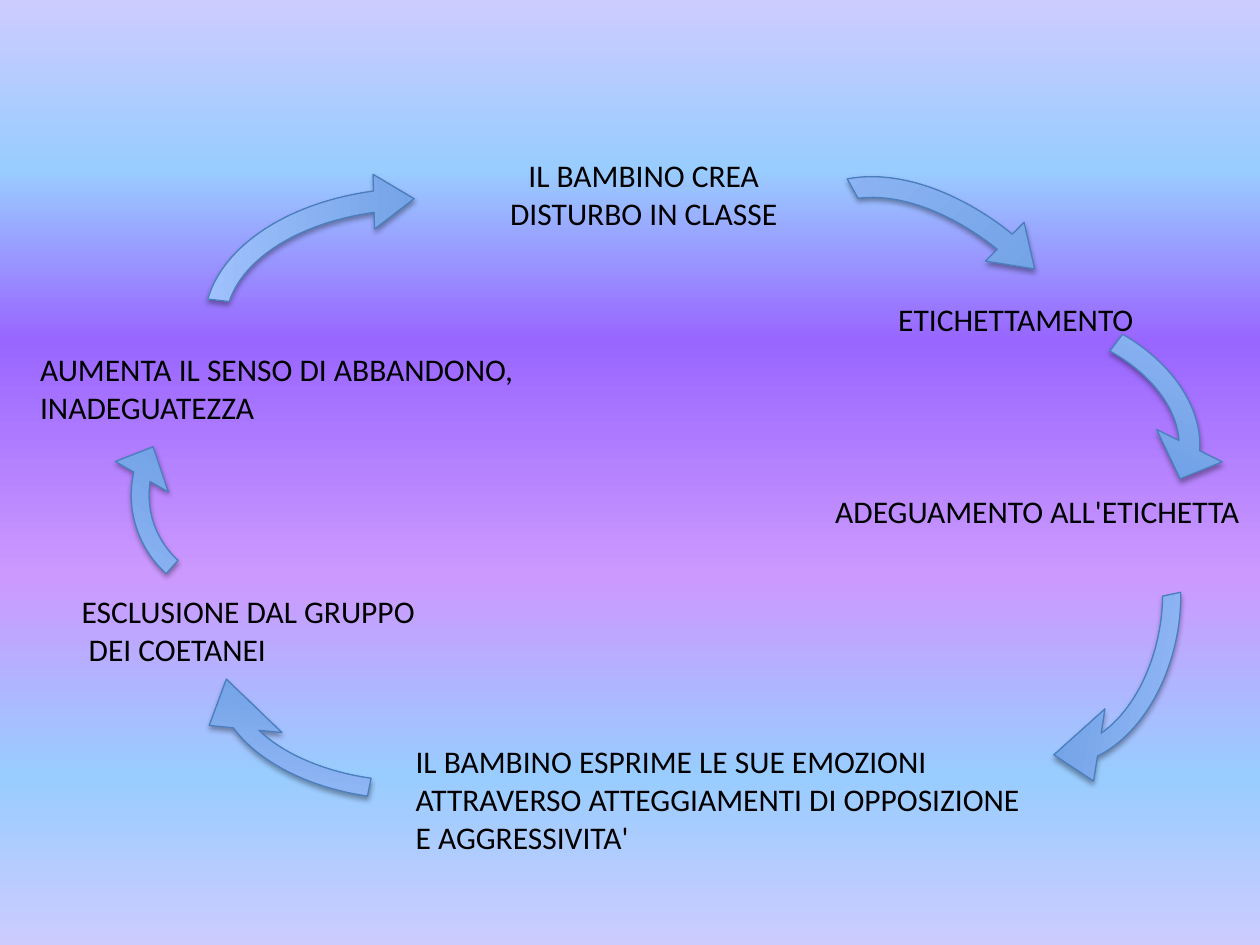
from dataclasses import dataclass

from lxml import etree
from pptx import Presentation
from pptx.dml.color import RGBColor
from pptx.enum.shapes import MSO_SHAPE
from pptx.enum.text import MSO_AUTO_SIZE, PP_ALIGN
from pptx.oxml.ns import qn
from pptx.slide import Slide
from pptx.util import Inches, Pt

CIRCULAR_ARROW = MSO_SHAPE.CIRCULAR_ARROW
FIT_SHAPE = MSO_AUTO_SIZE.SHAPE_TO_FIT_TEXT
LEFT = PP_ALIGN.LEFT
CENTER = PP_ALIGN.CENTER

FONT = "Calibri"
BLACK = RGBColor(0x00, 0x00, 0x00)
ARROW_DARK = RGBColor(0x3F, 0x80, 0xCE)
ARROW_LIGHT = RGBColor(0xA4, 0xC4, 0xFF)
ARROW_LINE = RGBColor(0x4B, 0x7E, 0xBC)
LAVENDER = RGBColor(0xCC, 0xCC, 0xFF)
SKY = RGBColor(0x99, 0xCC, 0xFF)
VIOLET = RGBColor(0x99, 0x66, 0xFF)
LILAC = RGBColor(0xCC, 0x99, 0xFF)
BACKGROUND_STOPS = (
    (0, LAVENDER), (18, SKY), (36, VIOLET), (61, LILAC), (82, SKY), (100, LAVENDER),
)


@dataclass(frozen=True)
class Step:
    text: str
    left: float
    top: float
    width: float
    height: float
    wrap: bool = True
    align: PP_ALIGN = LEFT


@dataclass(frozen=True)
class CycleArrow:
    left: float
    top: float
    width: float
    height: float
    rotation: float
    adjustments: tuple[float, ...]


STEPS = (
    Step("IL BAMBINO CREA DISTURBO IN CLASSE", 3.56, 1.19, 3.1, 0.71, align=CENTER),
    Step("ETICHETTAMENTO", 7.03, 2.33, 2.08, 0.4, wrap=False),
    Step("ADEGUAMENTO ALL'ETICHETTA", 6.53, 3.86, 3.52, 0.4, wrap=False),
    Step(
        "IL BAMBINO ESPRIME LE SUE EMOZIONI ATTRAVERSO ATTEGGIAMENTI "
        "DI OPPOSIZIONE E AGGRESSIVITA'",
        3.2, 5.84, 5, 1.01,
    ),
    Step("ESCLUSIONE DAL GRUPPO\n DEI COETANEI", 0.55, 4.65, 2.87, 0.71, wrap=False),
    Step("AUMENTA IL SENSO DI ABBANDONO,\nINADEGUATEZZA", 0.22, 2.73, 5, 0.71),
)

ARROWS = (
    CycleArrow(7.03, 2.29, 2.74, 2.07, 21.9, (0.08, 8.81, 209.8, 171.19, 0.14)),
    CycleArrow(7.12, 3.84, 2.84, 2.07, 99.8, (0.07, 11.42, 204.09, 149.04, 0.14)),
    CycleArrow(1.5, 4.48, 3.16, 2.07, 186.4, (0.07, 11.42, 204.09, 165.08, 0.14)),
    CycleArrow(0.87, 2.92, 2.02, 2.02, 210.8, (0.07, 11.42, 204.09, 168.75, 0.12)),
    CycleArrow(2.11, 0.74, 2.41, 3.65, 270, (0.07, 10.93, 204.09, 165.95, 0.09)),
    CycleArrow(6.31, 1.01, 2.41, 3.65, 316.5, (0.07, 10.93, 204.09, 170.58, 0.09)),
)


def paint_background(slide: Slide) -> None:
    fill = slide.background.fill
    fill.gradient()
    fill.gradient_angle = 270
    stop_list = next(slide.element.iter(qn("a:gsLst")))
    for stop in list(stop_list):
        stop_list.remove(stop)
    for position, color in BACKGROUND_STOPS:
        stop = etree.SubElement(stop_list, qn("a:gs"), pos=str(position * 1000))
        etree.SubElement(stop, qn("a:srgbClr"), val=str(color))


def add_step(slide: Slide, step: Step) -> None:
    box = slide.shapes.add_textbox(
        Inches(step.left), Inches(step.top), Inches(step.width), Inches(step.height)
    )
    frame = box.text_frame
    frame.word_wrap = step.wrap
    frame.auto_size = FIT_SHAPE
    frame.text = step.text
    for para in frame.paragraphs:
        para.alignment = step.align
        for span in para.runs:
            span.font.name = FONT
            span.font.size = Pt(18)
            span.font.color.rgb = BLACK


def add_arrow(slide: Slide, arrow: CycleArrow) -> None:
    shape = slide.shapes.add_shape(
        CIRCULAR_ARROW,
        Inches(arrow.left), Inches(arrow.top), Inches(arrow.width), Inches(arrow.height),
    )
    shape.rotation = arrow.rotation
    for index, value in enumerate(arrow.adjustments):
        shape.adjustments[index] = value
    shape.fill.gradient()
    shape.fill.gradient_angle = 90
    for stop, position, color in zip(
        shape.fill.gradient_stops, (0, 1), (ARROW_DARK, ARROW_LIGHT)
    ):
        stop.position = position
        stop.color.rgb = color
    shape.line.color.rgb = ARROW_LINE
    shape.line.width = Pt(0.75)
    shape.shadow.inherit = False
    effects = next(shape.element.iter(qn("a:effectLst")))
    shadow = etree.SubElement(
        effects, qn("a:outerShdw"),
        blurRad=str(Pt(3.1)), dist=str(Pt(1.8)), dir=str(90 * 60000), rotWithShape="0",
    )
    color = etree.SubElement(shadow, qn("a:srgbClr"), val=str(BLACK))
    etree.SubElement(color, qn("a:alpha"), val="35000")


def main() -> None:
    deck = Presentation()
    deck.slide_width = Inches(10)
    deck.slide_height = Inches(7.5)
    slide = deck.slides.add_slide(deck.slide_layouts[6])
    paint_background(slide)
    for step in STEPS:
        add_step(slide, step)
    for arrow in ARROWS:
        add_arrow(slide, arrow)
    deck.save("out.pptx")


if __name__ == "__main__":
    main()
